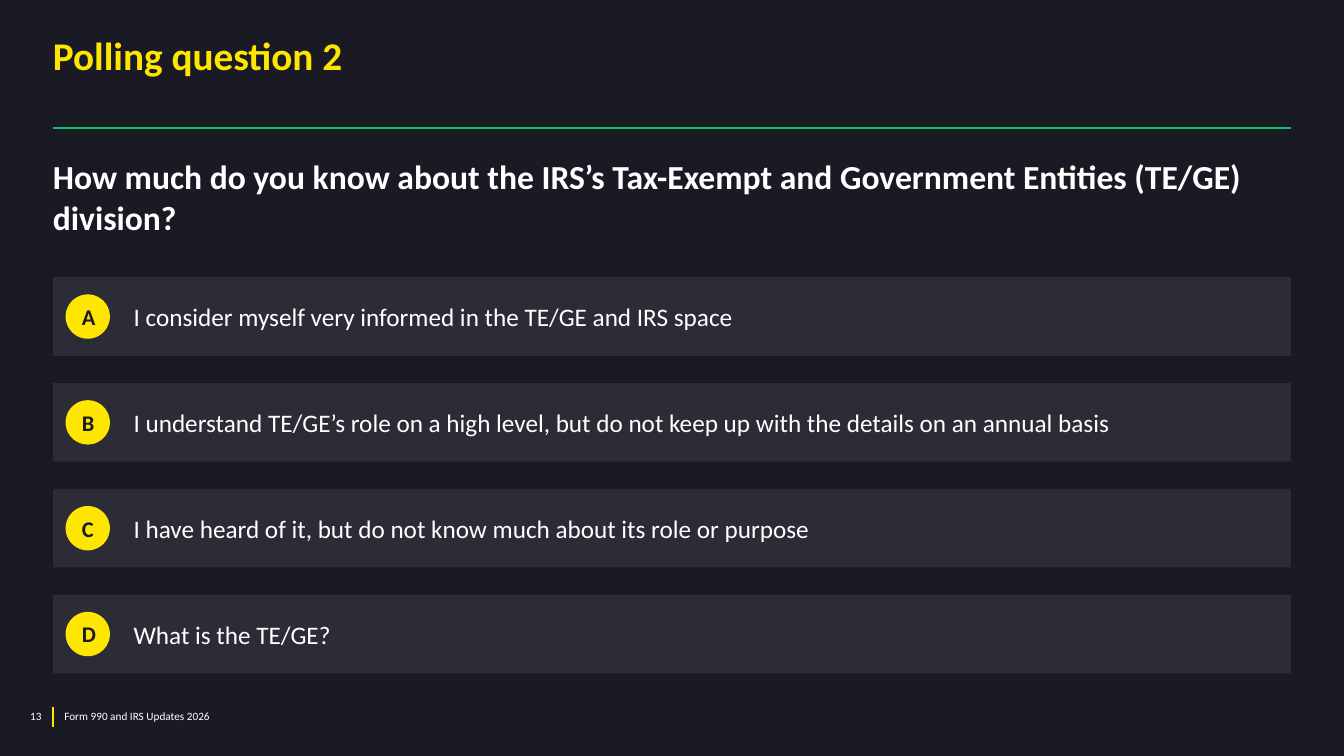
from dataclasses import dataclass

from lxml.etree import SubElement
from pptx import Presentation
from pptx.dml.color import RGBColor as Rgb
from pptx.enum.shapes import MSO_CONNECTOR as Conn, MSO_SHAPE as Kind
from pptx.enum.text import MSO_ANCHOR as Anchor, MSO_AUTO_SIZE as Fit, PP_ALIGN as Align
from pptx.oxml.ns import qn
from pptx.util import Inches, Pt

WIDE, HIGH = Inches(13.33), Inches(7.5)
DARK, GREY, GOLD, GREEN, WHITE = "1A1A24", "747480", "FFE600", "00C864", "FFFFFF"
LEFT, SPAN = 3.94, 92.12
TOP, STEP, BAR = 36.67, 14, 10.4


@dataclass
class Box:
    left: float
    top: float
    width: float
    height: float

    def place(self) -> tuple[int, int, int, int]:
        return (across(self.left), down(self.top),
                across(self.width), down(self.height))


@dataclass
class Choice:
    mark: str
    text: str


CHOICES = [
    Choice("A", "I consider myself very informed in the TE/GE and IRS space"),
    Choice("B", "I understand TE/GE’s role on a high level, but do not keep up "
                "with the details on an annual basis"),
    Choice("C", "I have heard of it, but do not know much about its role or purpose"),
    Choice("D", "What is the TE/GE?"),
]


def across(share: float) -> int:
    return round(WIDE * share / 100)


def down(share: float) -> int:
    return round(HIGH * share / 100)


def paint(fill, tone: str, alpha: int = 100) -> None:
    fill.solid()
    fill.fore_color.rgb = Rgb.from_string(tone)
    if alpha < 100:
        node = next(fill.fore_color._xFill.iter(qn("a:srgbClr")))
        SubElement(node, qn("a:alpha")).set("val", str(alpha * 1000))


def write(shape, text: str, *, size: float, tone: str = WHITE, bold: bool = False,
          align=Align.LEFT, anchor=Anchor.TOP, pad=(0, 0, 0, 0),
          lead: float = 1.0, fit=Fit.NONE) -> None:
    frame = shape.text_frame
    frame.word_wrap = True
    frame.auto_size = fit
    frame.vertical_anchor = anchor
    (frame.margin_left, frame.margin_top,
     frame.margin_right, frame.margin_bottom) = map(Inches, pad)
    para = frame.paragraphs[0]
    para.text = text
    para.alignment = align
    para.line_spacing = lead
    font = para.runs[0].font
    font.name, font.size, font.bold = "Calibri", Pt(size), bold
    font.color.rgb = Rgb.from_string(tone)


def label(slide, box: Box, text: str, **style) -> None:
    write(slide.shapes.add_textbox(*box.place()), text, **style)


def block(slide, kind: Kind, box: Box, tone: str, alpha: int = 100):
    shape = slide.shapes.add_shape(kind, *box.place())
    shape.shadow.inherit = False
    paint(shape.fill, tone, alpha)
    shape.line.fill.background()
    return shape


def rule(slide, box: Box, tone: str, width: float) -> None:
    left, top, wide, high = box.place()
    line = slide.shapes.add_connector(Conn.STRAIGHT, left, top, left + wide, top + high)
    paint(line.line.fill, tone)
    line.line.width = Pt(width)
    SubElement(line._element.spPr, qn("a:effectLst"))


def answer(slide, row: int, choice: Choice) -> None:
    top = TOP + row * STEP
    bar = block(slide, Kind.RECTANGLE, Box(LEFT, top, SPAN, BAR), GREY, 20)
    write(bar, choice.text, size=18, anchor=Anchor.MIDDLE, pad=(0.8, 0, 0, 0))
    disc = block(slide, Kind.OVAL, Box(4.88, top + 2.27, 3.3, 5.87), GOLD)
    write(disc, choice.mark, size=16, tone=DARK, bold=True,
          align=Align.CENTER, anchor=Anchor.MIDDLE, pad=(0.1,) * 4)


def main() -> None:
    deck = Presentation()
    deck.slide_width, deck.slide_height = WIDE, HIGH
    slide = deck.slides.add_slide(deck.slide_layouts[5])
    paint(slide.background.fill, DARK)

    title = slide.shapes.title
    title.left, title.top, title.width, title.height = Box(LEFT, 5.07, SPAN, 6.8).place()
    write(title, "Polling question 2", size=28, tone=GOLD, bold=True, lead=0.85)
    rule(slide, Box(LEFT, 16.93, SPAN, 0), GREEN, 2)
    label(slide, Box(LEFT, 20.67, SPAN, 10.8),
          "How much do you know about the IRS’s Tax-Exempt and Government "
          "Entities (TE/GE) division?", size=24, bold=True, fit=Fit.SHAPE_TO_FIT_TEXT)

    for row, choice in enumerate(CHOICES):
        answer(slide, row, choice)

    rule(slide, Box(LEFT, 93.47, 0, 2.67), GOLD, 1)
    label(slide, Box(4.05, 93.87, 45, 1.73), "Form 990 and IRS Updates 2026",
          size=8, pad=(0.1, 0, 0, 0))
    label(slide, Box(0.83, 93.87, 3, 1.73), "13",
          size=8, align=Align.RIGHT, pad=(0, 0, 0.1, 0))
    deck.save("out.pptx")


if __name__ == "__main__":
    main()
